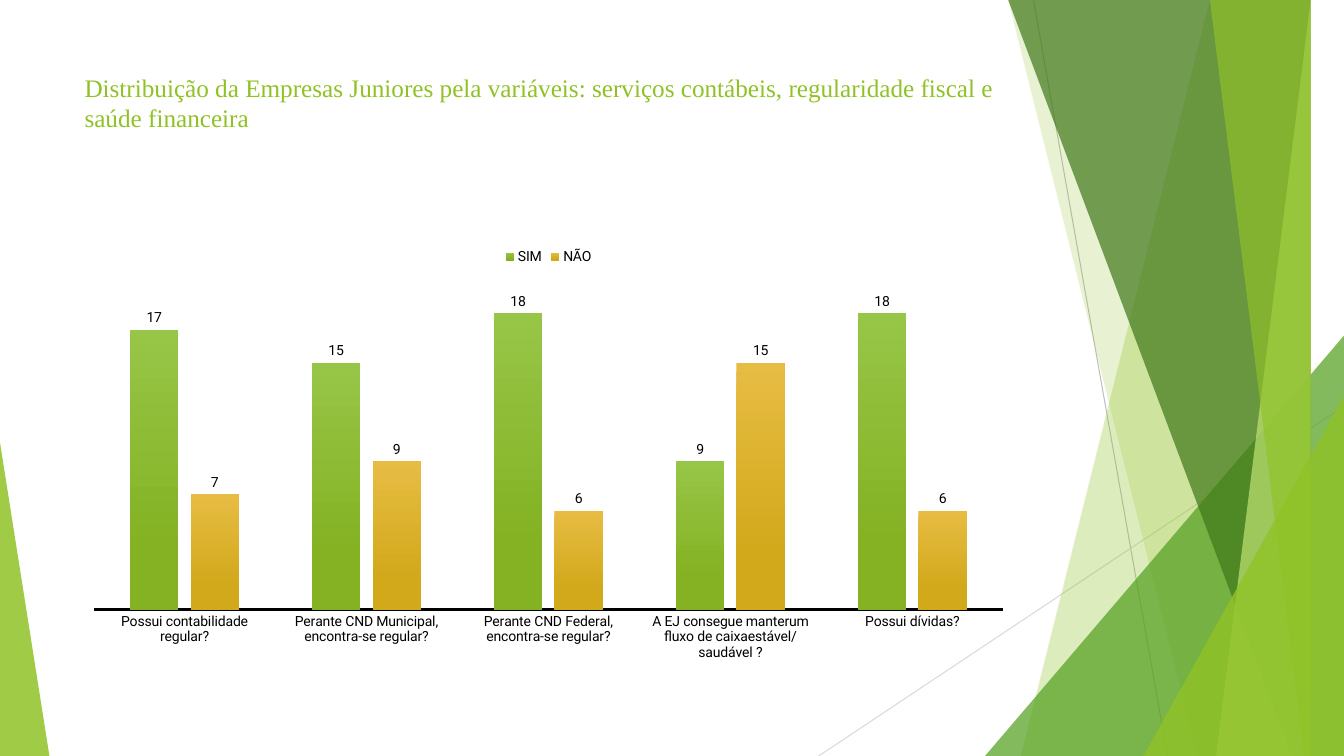
"""Build the slide on accounting, tax regularity and financial health of junior companies."""
from lxml import etree
from pptx import Presentation, util as u
from pptx.chart.data import CategoryChartData
from pptx.dml.color import RGBColor
from pptx.enum import chart as ch, shapes, text
from pptx.oxml import parse_xml
from pptx.oxml.ns import nsdecls, qn

WIDTH, HEIGHT = 13.33, 7.5


def rgb(value):
    return RGBColor.from_string(value)


def paint(facet, color, opacity):
    facet.shadow.inherit = False
    facet.line.fill.background()
    facet.fill.solid()
    facet.fill.fore_color.rgb = rgb(color)
    tone = facet.fill._xPr.find(".//" + qn("a:srgbClr"))
    etree.SubElement(tone, qn("a:alpha"), val=str(opacity * 1000))


deck = Presentation()
deck.slide_width, deck.slide_height = u.Inches(WIDTH), u.Inches(HEIGHT)
slide = deck.slides.add_slide(deck.slide_layouts[6])

for x1, y1, x2, y2, color in [
    (10.25, 0, 11.58, HEIGHT, "BFBFBF"),
    (WIDTH, 4.03, 8.12, HEIGHT, "D9D9D9"),
]:
    ray = slide.shapes.add_connector(
        shapes.MSO_CONNECTOR.STRAIGHT, *map(u.Inches, (x1, y1, x2, y2)))
    ray.line.color.rgb = rgb(color)
    ray.line.width = u.Pt(0.75)
    etree.SubElement(ray._element.spPr, qn("a:effectLst"))

facets = [
    ("band", 12.28, 10.04, "90C226", 30),
    ("band", 10.5, 11.83, "90C226", 20),
    ("corner", 9.77, 3.33, "54A021", 72),
    ("band", 10.21, 12.91, "3F7819", 70),
    ("band", 13.03, 11.92, "C0E474", 70),
    ("band", 11.96, 13.18, "90C226", 65),
    ("corner", 11.34, 3.93, "90C226", 80),
]
for kind, first, second, color, opacity in facets:
    if kind == "band":
        outline = slide.shapes.build_freeform(first, 0, scale=u.Inches(1))
        outline.add_line_segments([(WIDTH, 0), (WIDTH, HEIGHT), (second, HEIGHT)])
        facet = outline.convert_to_shape()
    else:
        facet = slide.shapes.add_shape(
            shapes.MSO_SHAPE.ISOSCELES_TRIANGLE, u.Inches(first), u.Inches(second),
            u.Inches(WIDTH - first), u.Inches(HEIGHT - second))
        facet.adjustments[0] = 1
    paint(facet, color, opacity)

left_wedge = slide.shapes.add_shape(
    shapes.MSO_SHAPE.ISOSCELES_TRIANGLE, *map(u.Inches, (0, 4.39, 0.49, 3.11)))
left_wedge.adjustments[0] = 0
paint(left_wedge, "90C226", 85)

heading = slide.shapes.add_textbox(*map(u.Inches, (0.74, 0.67, 9.4, 1.44))).text_frame
heading.word_wrap = True
heading.vertical_anchor = text.MSO_ANCHOR.TOP
heading_run = heading.paragraphs[0].add_run()
heading_run.text = ("Distribuição da Empresas Juniores pela variáveis: "
                    "serviços contábeis, regularidade fiscal e saúde financeira")
for key, value in {"name": "Times New Roman", "size": u.Pt(18)}.items():
    setattr(heading_run.font, key, value)
heading_run.font.color.rgb = rgb("90C226")

answers = CategoryChartData()
answers.categories = [
    "Possui contabilidade regular?",
    "Perante CND Municipal, encontra-se regular?",
    "Perante CND Federal, encontra-se regular?",
    "A EJ consegue manterum fluxo de caixaestável/saudável ?",
    "Possui dívidas?",
]
answers.add_series("SIM", [17, 15, 18, 9, 18])
answers.add_series("NÃO", [7, 9, 6, 15, 6])
survey = slide.shapes.add_chart(
    ch.XL_CHART_TYPE.COLUMN_CLUSTERED,
    *map(u.Inches, (0.74, 2.36, 9.4, 4.24)), answers).chart
survey.has_title = False
survey.has_legend = True
survey.legend.position = ch.XL_LEGEND_POSITION.TOP
survey.legend.include_in_layout = False

questions, counts = survey.category_axis, survey.value_axis
questions.major_tick_mark = ch.XL_TICK_MARK.NONE
questions.format.line.color.rgb = rgb("000000")
questions.format.line.width = u.Pt(2)
for key, value in {"visible": False, "has_major_gridlines": False,
                   "minimum_scale": 0, "maximum_scale": 20}.items():
    setattr(counts, key, value)

columns = survey.plots[0]
columns.vary_by_categories = False
columns.gap_width, columns.overlap = 150, -25
columns.has_data_labels = True
columns.data_labels.show_value = True
columns.data_labels.position = ch.XL_LABEL_POSITION.OUTSIDE_END

for font in (survey.font, survey.legend.font, questions.tick_labels.font,
             columns.data_labels.font):
    font.name, font.size = "Roboto", u.Pt(10)
    font.color.rgb = rgb("000000")

for answer, shades in zip(columns.series, [("97C547", "84B223"), ("E7BC43", "D2A91B")]):
    fill = answer.format.fill
    fill.gradient()
    fill.gradient_angle = 270
    for stop, shade, position in zip(fill.gradient_stops, shades, (0, 0.78)):
        stop.color.rgb = rgb(shade)
        stop.position = position

plot_area = survey._chartSpace.chart.plotArea
for layout in plot_area.findall(qn("c:layout")):
    plot_area.remove(layout)
plot_area.insert(0, parse_xml(
    f'<c:layout {nsdecls("c")}><c:manualLayout><c:layoutTarget val="inner"/>'
    '<c:xMode val="edge"/><c:yMode val="edge"/><c:x val="0.02"/><c:y val="0.1"/>'
    '<c:w val="0.96"/><c:h val="0.77"/></c:manualLayout></c:layout>'))

deck.save("out.pptx")
